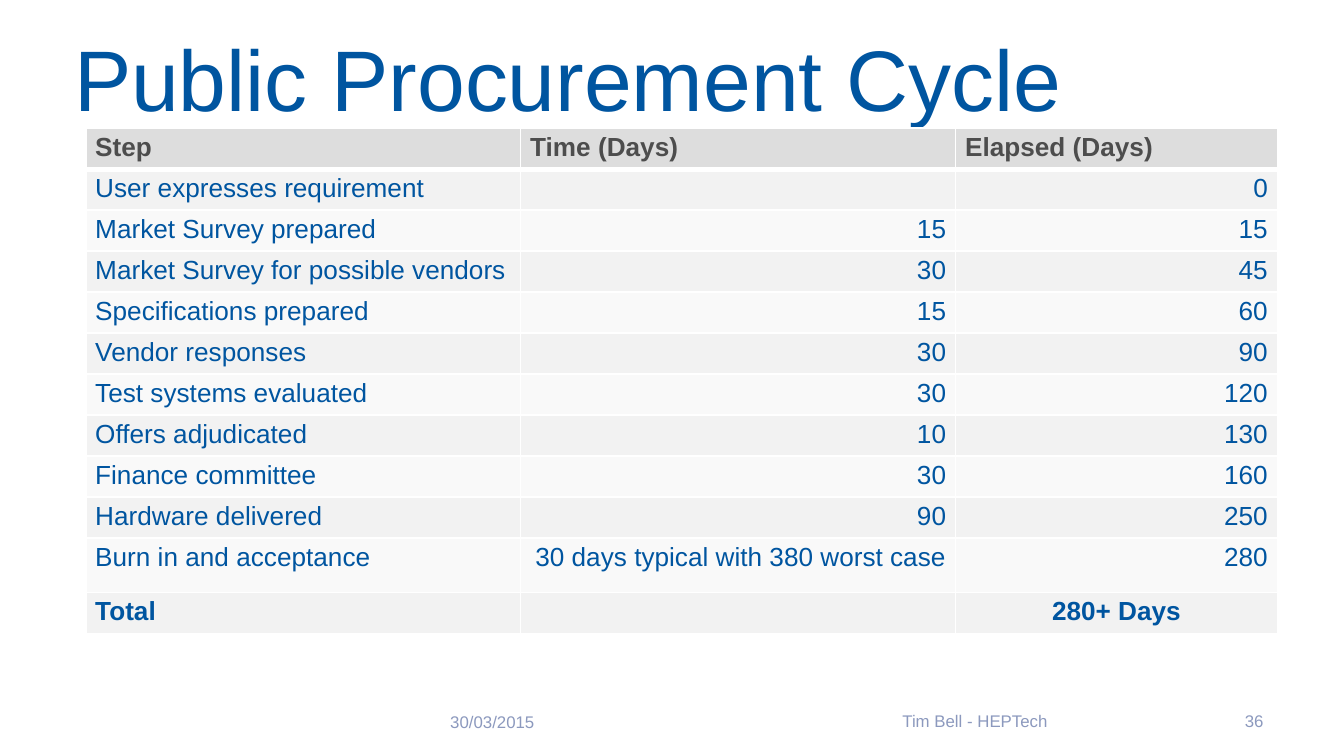
from lxml.etree import SubElement
from pptx import Presentation
from pptx.dml.color import RGBColor
from pptx.enum.text import MSO_ANCHOR, PP_ALIGN
from pptx.oxml.ns import qn
from pptx.util import Cm, Pt

BLUE = RGBColor(0x00, 0x55, 0xA0)
GREY_BLUE = RGBColor(0x8C, 0x99, 0xBE)
DARK_GREY = RGBColor(0x4D, 0x4D, 0x4D)
HEADER_FILL = RGBColor(0xDD, 0xDD, 0xDD)
BAND_FILLS = [RGBColor(0xF9, 0xF9, 0xF9), RGBColor(0xF2, 0xF2, 0xF2)]
WHITE = RGBColor(0xFF, 0xFF, 0xFF)

ROWS = [
    ("Step", "Time (Days)", "Elapsed (Days)"),
    ("User expresses requirement", "", "0"),
    ("Market Survey prepared", "15", "15"),
    ("Market Survey for possible vendors", "30", "45"),
    ("Specifications prepared", "15", "60"),
    ("Vendor responses", "30", "90"),
    ("Test systems evaluated", "30", "120"),
    ("Offers adjudicated", "10", "130"),
    ("Finance committee", "30", "160"),
    ("Hardware delivered", "90", "250"),
    ("Burn in and acceptance", "30 days typical with 380 worst case", "280"),
    ("Total", "", "280+ Days"),
]
TOTAL_ROW = len(ROWS) - 1
BURN_IN_ROW = TOTAL_ROW - 1


def format_paragraph(paragraph, size, color, alignment, bold=False):
    paragraph.alignment = alignment
    paragraph.font.name = "Arial"
    paragraph.font.size = Pt(size)
    paragraph.font.bold = bold
    paragraph.font.color.rgb = color


def add_border(cell, side, width):
    line = SubElement(cell._tc.get_or_add_tcPr(), qn(f"a:ln{side}"), w=str(Pt(width)))
    fill = SubElement(line, qn("a:solidFill"))
    SubElement(fill, qn("a:srgbClr"), val=str(WHITE))


presentation = Presentation()
presentation.slide_width = Cm(25.4)
presentation.slide_height = Cm(14.28)
slide = presentation.slides.add_slide(presentation.slide_layouts[6])

TEXTS = [
    ("Public Procurement Cycle", 1.27, 0.48, 22.86, 1.96, 0.13, 46, BLUE, PP_ALIGN.LEFT),
    ("30/03/2015", 8.26, 13.26, 5.92, 0.76, 0.25, 9, GREY_BLUE, PP_ALIGN.LEFT),
    ("Tim Bell - HEPTech", 14.4, 13.23, 8.05, 0.76, 0.25, 9, GREY_BLUE, PP_ALIGN.CENTER),
    ("36", 22.73, 13.23, 1.4, 0.76, 0.25, 9, GREY_BLUE, PP_ALIGN.RIGHT),
]
for text, left, top, width, height, inset, size, color, alignment in TEXTS:
    text_box = slide.shapes.add_textbox(Cm(left), Cm(top), Cm(width), Cm(height))
    frame = text_box.text_frame
    frame.word_wrap = True
    frame.vertical_anchor = MSO_ANCHOR.MIDDLE
    frame.margin_left = frame.margin_right = Cm(inset)
    frame.margin_top = frame.margin_bottom = Cm(0.13)
    frame.text = text
    format_paragraph(frame.paragraphs[0], size, color, alignment)

table = slide.shapes.add_table(
    len(ROWS), 3, Cm(1.62), Cm(2.42), Cm(22.52), Cm(9.5)
).table
for column, width in zip(table.columns, [8.22, 8.22, 6.08]):
    column.width = Cm(width)

for row_index, values in enumerate(ROWS):
    is_header = row_index == 0
    is_total = row_index == TOTAL_ROW
    table.rows[row_index].height = Cm(1.03 if row_index == BURN_IN_ROW else 0.77)
    for column_index, value in enumerate(values):
        cell = table.cell(row_index, column_index)
        cell.margin_left = cell.margin_right = Cm(0.18)
        cell.margin_top = cell.margin_bottom = Cm(0.09)
        add_border(cell, "L", 1)
        add_border(cell, "R", 1)
        add_border(cell, "T", 3 if row_index == 1 else 1)
        add_border(cell, "B", 3 if is_header else 1)
        cell.fill.solid()
        cell.fill.fore_color.rgb = HEADER_FILL if is_header else BAND_FILLS[row_index % 2]

        if is_header or column_index == 0:
            alignment = PP_ALIGN.LEFT
        elif is_total:
            alignment = PP_ALIGN.CENTER
        else:
            alignment = PP_ALIGN.RIGHT
        cell.text = value
        paragraph = cell.text_frame.paragraphs[0]
        format_paragraph(
            paragraph, 14, DARK_GREY if is_header else BLUE, alignment, is_header or is_total
        )
        if not value:
            SubElement(paragraph._p, qn("a:endParaRPr"), sz="1400")

presentation.save("out.pptx")
